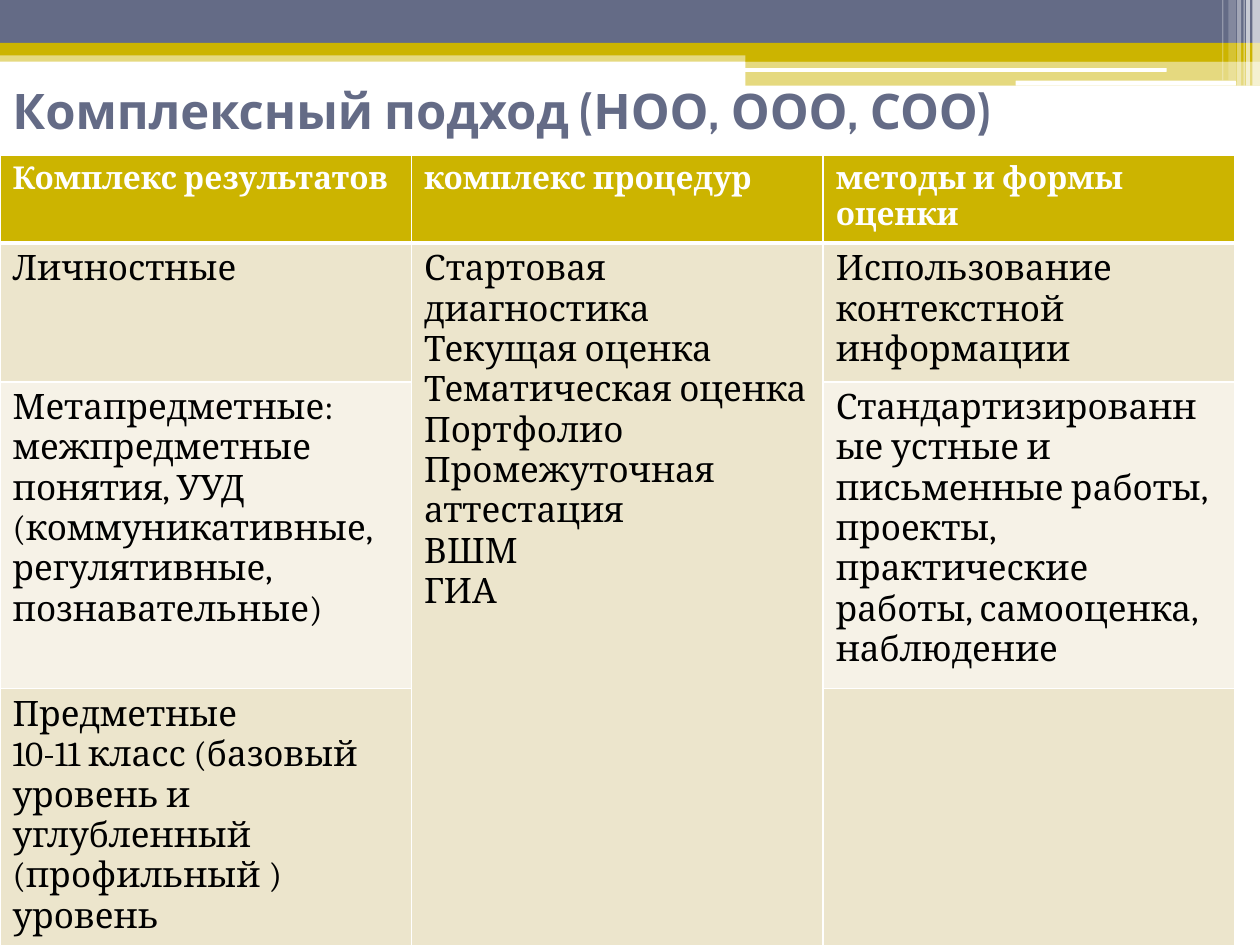
from lxml.etree import SubElement
from pptx import Presentation
from pptx.dml.color import RGBColor
from pptx.enum.shapes import MSO_SHAPE
from pptx.enum.text import MSO_ANCHOR
from pptx.oxml import parse_xml
from pptx.oxml.ns import nsdecls, qn
from pptx.util import Pt

COLORS = {
    "slate": "646B86",
    "gold": "CCB400",
    "white": "FFFFFF",
    "black": "000000",
    "sand": "ECE5CC",
    "cream": "F6F2E7",
}
HEADING_FONT, BODY_FONT = "Cabin", "Cambria"

# left, top, width, height, colour, opacity in percent
HEADER_BARS = [
    (0, 28.8, 720, 6.5, "gold", 50),
    (0, 0, 720, 24.5, "slate", 100),
    (0, 24.5, 720, 7.2, "gold", 100),
    (426, 28.1, 294, 7.2, "gold", 100),
    (426, 34.6, 294, 14.4, "gold", 50),
]
WHITE_LINES = [(425.5, 38.9, 241.2, 2.2), (580.3, 46.1, 126, 2.9)]
# left, width, height, opacity in percent
CORNER_STRIPES = [
    (715.7, 4.3, 49, 65),
    (712.1, 2.2, 49, 65),
    (710.6, 0.7, 49, 60),
    (707, 2.2, 49, 40),
    (702, 4.3, 46, 20),
    (698.4, 0.7, 46, 30),
]

# Each cell is a list of paragraphs.
TABLE_ROWS = [
    [["Комплекс результатов"], ["комплекс процедур"], ["методы и формы оценки"]],
    [
        ["Личностные"],
        ["Стартовая диагностика", "Текущая оценка", "Тематическая оценка", "Портфолио",
         "Промежуточная аттестация", "ВШМ", "ГИА"],
        ["Использование контекстной информации"],
    ],
    [
        ["Метапредметные:",
         "межпредметные понятия, УУД (коммуникативные, регулятивные, познавательные)"],
        [],
        ["Стандартизированные устные и письменные работы,",
         "проекты, практические работы, самооценка, наблюдение"],
    ],
    [
        ["Предметные",
         "10-11 класс (базовый уровень и углубленный (профильный ) уровень"],
        [],
        [],
    ],
]
ROW_HEIGHTS = [48.5, 76.5, 168.5, 158]
ROW_FILLS = ["gold", "sand", "cream", "sand"]


def rgb(name):
    return RGBColor.from_string(COLORS[name])


def write_text(text_frame, paragraphs, *, font, size, color, bold=False):
    for index, text in enumerate(paragraphs):
        paragraph = text_frame.paragraphs[0] if index == 0 else text_frame.add_paragraph()
        run = paragraph.add_run()
        run.text = text
        run.font.name = font
        run.font.size = Pt(size)
        run.font.bold = bold
        run.font.color.rgb = rgb(color)


def set_borders(cell, color, left=1, right=1, top=1, bottom=1):
    properties = cell._tc.get_or_add_tcPr()
    widths = {"lnL": left, "lnR": right, "lnT": top, "lnB": bottom}
    for position, (tag, width) in enumerate(widths.items()):
        line = parse_xml(
            f'<a:{tag} {nsdecls("a")} w="{Pt(width)}"><a:solidFill>'
            f'<a:srgbClr val="{COLORS[color]}"/></a:solidFill></a:{tag}>'
        )
        properties.insert(position, line)


class SlideBuilder:
    """Adds styled elements, measured in points, to one slide."""

    def __init__(self, slide):
        self.slide = slide

    def bar(self, left, top, width, height, color, opacity=100, rounded=False):
        kind = MSO_SHAPE.ROUNDED_RECTANGLE if rounded else MSO_SHAPE.RECTANGLE
        shape = self.slide.shapes.add_shape(kind, Pt(left), Pt(top), Pt(width), Pt(height))
        shape.shadow.inherit = False
        shape.line.fill.background()
        shape.fill.solid()
        shape.fill.fore_color.rgb = rgb(color)
        if opacity < 100:
            color_element = shape._element.spPr.find(qn("a:solidFill"))[0]
            SubElement(color_element, qn("a:alpha"), val=str(opacity * 1000))

    def title(self, text, left, top, width, height):
        box = self.slide.shapes.add_textbox(Pt(left), Pt(top), Pt(width), Pt(height))
        box.text_frame.word_wrap = True
        box.text_frame.vertical_anchor = MSO_ANCHOR.MIDDLE
        write_text(box.text_frame, [text], font=HEADING_FONT, size=28, color="slate", bold=True)

    def table(self, rows, left, top, width):
        frame = self.slide.shapes.add_table(
            len(rows), len(rows[0]), Pt(left), Pt(top), Pt(width), Pt(sum(ROW_HEIGHTS)))
        table = frame.table
        for column in table.columns:
            column.width = Pt(width / len(rows[0]))
        for row_index, row in enumerate(rows):
            table.rows[row_index].height = Pt(ROW_HEIGHTS[row_index])
            header = row_index == 0
            for column_index, paragraphs in enumerate(row):
                cell = table.cell(row_index, column_index)
                cell.fill.solid()
                cell.fill.fore_color.rgb = rgb(ROW_FILLS[row_index])
                set_borders(cell, "white", top=3 if row_index == 1 else 1,
                            bottom=3 if header else 1)
                write_text(cell.text_frame, paragraphs, font=BODY_FONT,
                           size=18 if header else 20,
                           color="white" if header else "black", bold=header)
        table.cell(1, 1).merge(table.cell(3, 1))


def main():
    presentation = Presentation()
    presentation.slide_width, presentation.slide_height = Pt(720), Pt(540)
    builder = SlideBuilder(presentation.slides.add_slide(presentation.slide_layouts[6]))

    for bar in HEADER_BARS:
        builder.bar(*bar)
    for line in WHITE_LINES:
        builder.bar(*line, "white", rounded=True)
    for left, width, height, opacity in CORNER_STRIPES:
        builder.bar(left, 0, width, height, "white", opacity)

    builder.title("Комплексный подход (НОО, ООО, СОО)", 0, 31.7, 648, 62.6)
    builder.table(TABLE_ROWS, 0, 88.5, 705.6)
    presentation.save("out.pptx")


if __name__ == "__main__":
    main()
